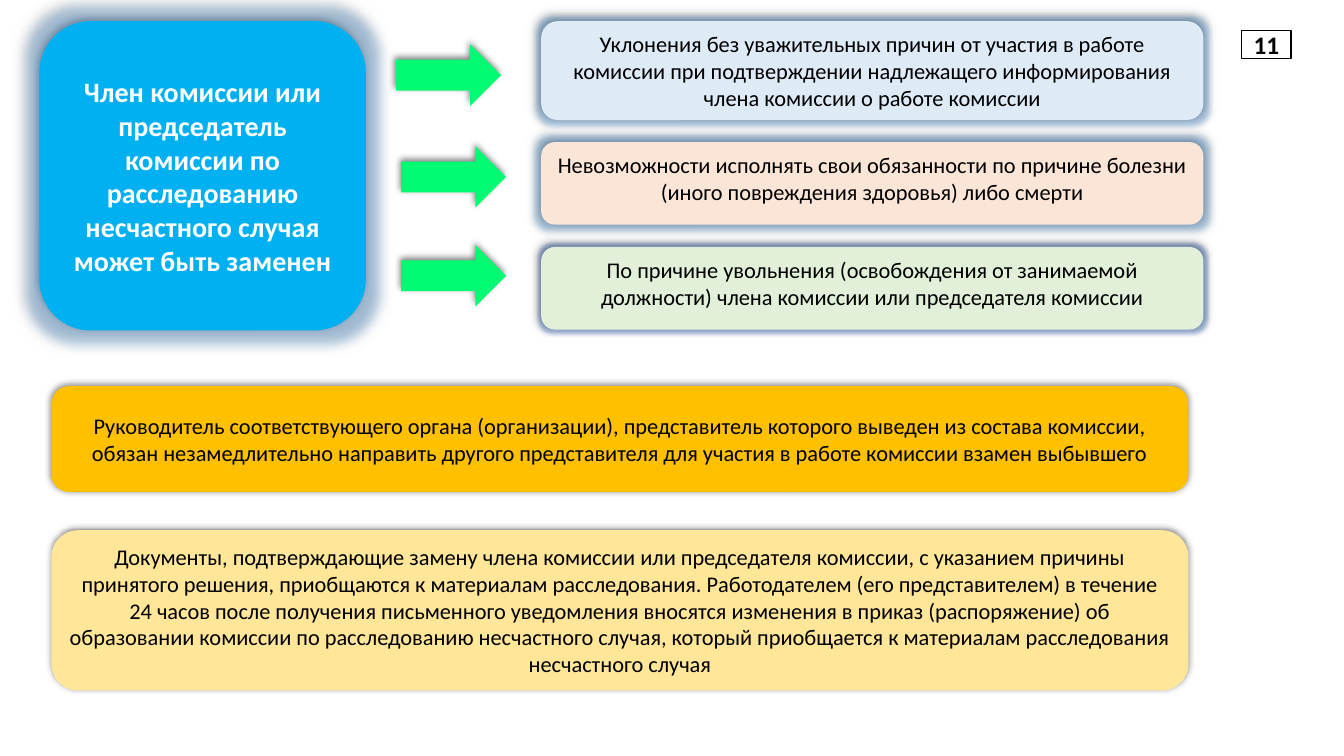
from pptx import Presentation
from pptx.dml.color import RGBColor
from pptx.enum.shapes import MSO_SHAPE as SHAPE
from pptx.enum.text import MSO_ANCHOR as ANCHOR, PP_ALIGN as ALIGN
from pptx.oxml.ns import qn
from pptx.util import Pt
from lxml.etree import SubElement

WHITE = RGBColor(0xFF, 0xFF, 0xFF)
BLACK = RGBColor(0x00, 0x00, 0x00)
BLUE = RGBColor(0x00, 0xB0, 0xF0)
GREEN = RGBColor(0x00, 0xFA, 0x71)
PALE_BLUE = RGBColor(0xDE, 0xEB, 0xF7)
PALE_ORANGE = RGBColor(0xFB, 0xE5, 0xD6)
PALE_GREEN = RGBColor(0xE2, 0xF0, 0xD9)
AMBER = RGBColor(0xFF, 0xC0, 0x00)
SAND = RGBColor(0xFF, 0xE6, 0x99)
GLOW_BLUE = RGBColor(0x5B, 0x9B, 0xD5)
GLOW_INDIGO = RGBColor(0x44, 0x72, 0xC4)

# Content
SUBJECT = ("Член комиссии или председатель комиссии по расследованию "
           "несчастного случая может быть заменен")
# text, top, height, fill, anchor, glow (colour, radius), arrow left, arrow top
REASONS = [
    ("Уклонения без уважительных причин от участия в работе комиссии при "
     "подтверждении надлежащего информирования члена комиссии о работе комиссии",
     15.1, 70.6, PALE_BLUE, ANCHOR.MIDDLE, (GLOW_BLUE, 8), 283, 31.7),
    ("Невозможности исполнять свои обязанности по причине болезни "
     "(иного повреждения здоровья) либо смерти",
     101.5, 59, PALE_ORANGE, ANCHOR.TOP, (GLOW_BLUE, 8), 286.6, 104.4),
    ("По причине увольнения (освобождения от занимаемой должности) "
     "члена комиссии или председателя комиссии",
     176.4, 59, PALE_GREEN, ANCHOR.TOP, (GLOW_INDIGO, 5), 286.6, 175),
]
# text, top, height, fill, anchor
DUTIES = [
    ("Руководитель соответствующего органа (организации), представитель которого "
     "выведен из состава комиссии, обязан незамедлительно направить другого "
     "представителя для участия в работе комиссии взамен выбывшего",
     275.8, 75.6, AMBER, ANCHOR.MIDDLE),
    ("Документы, подтверждающие замену члена комиссии или председателя комиссии, "
     "с указанием причины принятого решения, приобщаются к материалам "
     "расследования. Работодателем (его представителем) в течение 24 часов после "
     "получения письменного уведомления вносятся изменения в приказ (распоряжение) "
     "об образовании комиссии по расследованию несчастного случая, который "
     "приобщается к материалам расследования несчастного случая",
     378.7, 114.5, SAND, ANCHOR.TOP),
]
PAGE = "11"

prs = Presentation()
prs.slide_width, prs.slide_height = Pt(960), Pt(540)
s = prs.slides.add_slide(prs.slide_layouts[6])


def add_color(parent, color, alpha):
    clr = SubElement(parent, qn("a:srgbClr"), val=str(color))
    SubElement(clr, qn("a:alpha"), val=str(alpha * 1000))


def add_effects(sp, glow):
    """Soft shadow falling upwards, with an optional coloured glow."""
    effects = sp._element.spPr.find(qn("a:effectLst"))
    if glow:
        color, radius = glow
        add_color(SubElement(effects, qn("a:glow"), rad=str(Pt(radius))), color, 40)
    shadow = SubElement(effects, qn("a:outerShdw"), blurRad=str(Pt(5)),
                        dist=str(Pt(2)), dir=str(245 * 60000), rotWithShape="0")
    add_color(shadow, BLACK, 50)


def add_block(kind, box, fill, shadow=True, glow=None):
    sp = s.shapes.add_shape(kind, *[Pt(v) for v in box])
    sp.shadow.inherit = False
    sp.fill.solid()
    sp.fill.fore_color.rgb = fill
    sp.line.fill.background()
    if shadow:
        add_effects(sp, glow)
    return sp


def write(sp, text, size=16, color=BLACK, bold=False, anchor=ANCHOR.MIDDLE):
    tf = sp.text_frame
    tf.word_wrap = True
    tf.vertical_anchor = anchor
    p = tf.paragraphs[0]
    p.alignment = ALIGN.CENTER
    r = p.add_run()
    r.text = text
    r.font.name, r.font.size, r.font.bold = "Calibri", Pt(size), bold
    r.font.color.rgb = color


# Who may be replaced
sp = add_block(SHAPE.ROUNDED_RECTANGLE, (28.1, 15.1, 233.3, 221), BLUE,
               glow=(GLOW_BLUE, 18))
write(sp, SUBJECT, size=20, color=WHITE, bold=True)

# Reasons, each with its arrow
for text, top, height, fill, anchor, glow, arrow_left, arrow_top in REASONS:
    add_block(SHAPE.RIGHT_ARROW, (arrow_left, arrow_top, 74.9, 44), GREEN)
    sp = add_block(SHAPE.ROUNDED_RECTANGLE, (386.6, top, 473, height), fill, glow=glow)
    write(sp, text, anchor=anchor)

# What follows from the replacement
for text, top, height, fill, anchor in DUTIES:
    sp = add_block(SHAPE.ROUNDED_RECTANGLE, (36.7, top, 812.2, height), fill)
    write(sp, text, anchor=anchor)

# Page number
sp = add_block(SHAPE.RECTANGLE, (887, 21.6, 35.3, 20.2), WHITE, shadow=False)
sp.line.color.rgb = BLACK
sp.line.width = Pt(1)
write(sp, PAGE, size=18, bold=True)

prs.save("out.pptx")
